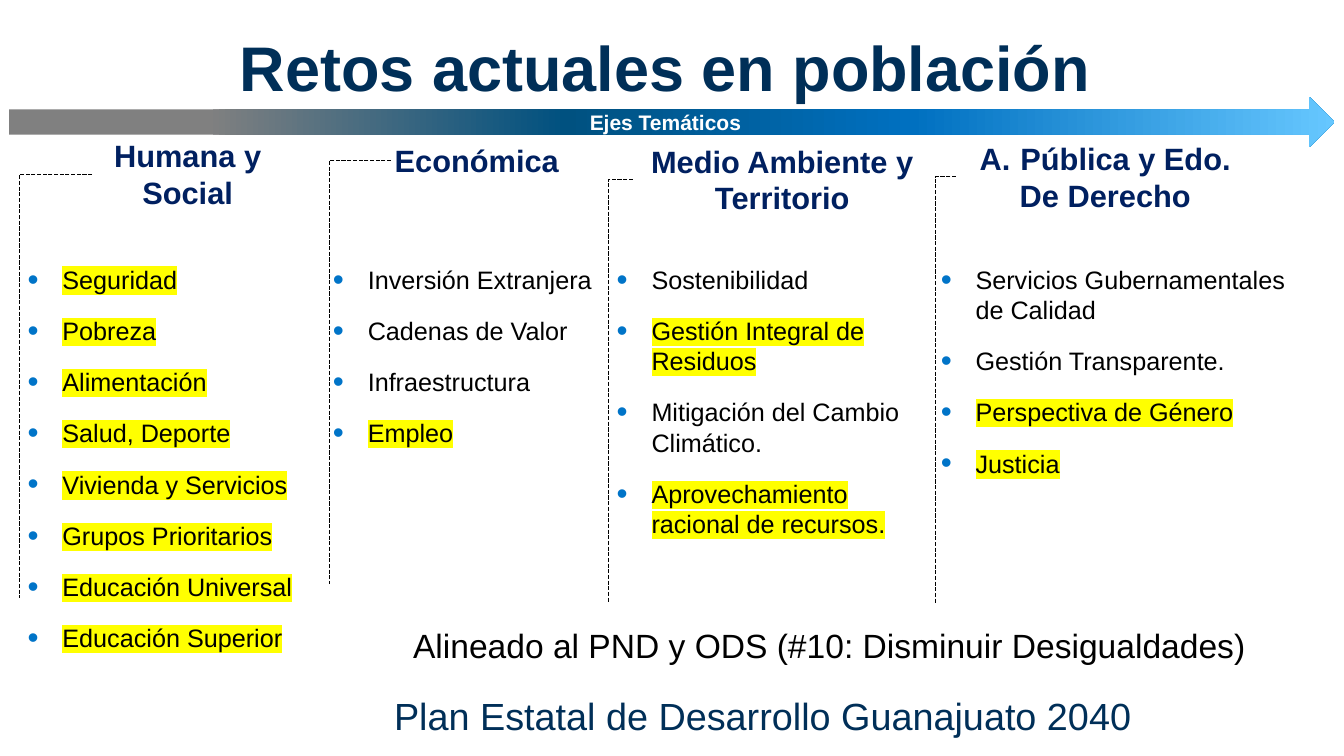
"""Build the slide on current population challenges by thematic axis."""
from dataclasses import dataclass

from lxml import etree
from pptx import Presentation
from pptx.dml.color import RGBColor
from pptx.enum.dml import MSO_LINE
from pptx.enum.shapes import MSO_CONNECTOR, MSO_SHAPE
from pptx.enum.text import MSO_ANCHOR, MSO_AUTO_SIZE, PP_ALIGN
from pptx.oxml.ns import qn
from pptx.slide import Slide
from pptx.text.text import TextFrame, _Paragraph
from pptx.util import Inches, Pt

LEFT, CENTER = PP_ALIGN.LEFT, PP_ALIGN.CENTER
TOP, MIDDLE = MSO_ANCHOR.TOP, MSO_ANCHOR.MIDDLE
NO_AUTOFIT = MSO_AUTO_SIZE.NONE
LONG_DASH = MSO_LINE.LONG_DASH
RIGHT_ARROW = MSO_SHAPE.RIGHT_ARROW
ELBOW = MSO_CONNECTOR.ELBOW
TITLE_ONLY = 5


@dataclass(frozen=True)
class Style:
    size: float
    color: str
    bold: bool = False


@dataclass(frozen=True)
class Theme:
    font: str = "Arial"
    title: Style = Style(90, "002F58", True)
    banner: Style = Style(30, "FFFFFF", True)
    heading: Style = Style(44, "002060", True)
    item: Style = Style(36, "000000")
    alignment: Style = Style(48, "000000")
    plan: Style = Style(54, "002F58")
    bullet: str = "0074C8"
    highlight: str = "FFFF00"
    rail: str = "000000"
    gradient: tuple[tuple[int, str], ...] = (
        (15, "808080"), (42, "005180"), (68, "0070C0"), (100, "66C7FF"))


@dataclass(frozen=True)
class Box:
    left: float
    top: float
    width: float
    height: float

    def lengths(self) -> tuple[Inches, ...]:
        return tuple(Inches(n) for n in (self.left, self.top, self.width, self.height))


@dataclass(frozen=True)
class Item:
    text: str
    marked: bool = False


@dataclass(frozen=True)
class Axis:
    heading: tuple[str, ...]
    heading_box: Box
    rail_left: float
    rail_bottom: float
    list_box: Box
    items: tuple[Item, ...]
    lettered: bool = False


THEME = Theme()
AXES = (
    Axis(("Humana y Social",), Box(1.83, 2.66, 3.79, 1.59), 0.39, 11.87,
         Box(0.45, 5.19, 5.71, 7.89),
         (Item("Seguridad", True), Item("Pobreza", True), Item("Alimentación", True),
          Item("Salud, Deporte", True), Item("Vivienda y Servicios", True),
          Item("Grupos Prioritarios", True), Item("Educación Universal", True),
          Item("Educación Superior", True))),
    Axis(("Económica",), Box(7.76, 2.76, 3.41, 0.85), 6.53, 11.59,
         Box(6.51, 5.19, 5.34, 5.22),
         (Item("Inversión Extranjera"), Item("Cadenas de Valor"),
          Item("Infraestructura"), Item("Empleo", True))),
    Axis(("Medio Ambiente y Territorio",), Box(12.56, 2.76, 5.93, 1.59), 12.08, 11.96,
         Box(12.14, 5.19, 6.06, 7.04),
         (Item("Sostenibilidad"), Item("Gestión Integral de Residuos", True),
          Item("Mitigación del Cambio Climático."),
          Item("Aprovechamiento racional de recursos.", True))),
    Axis(("Pública y Edo.", "De Derecho"), Box(18.97, 2.71, 5.93, 1.59), 18.56, 11.96,
         Box(18.57, 5.19, 7.54, 4.39),
         (Item("Servicios Gubernamentales de Calidad"), Item("Gestión Transparente."),
          Item("Perspectiva de Género", True), Item("Justicia", True)), lettered=True),
)


def set_frame(frame: TextFrame, anchor: MSO_ANCHOR, inset_x: float, inset_y: float) -> None:
    frame.word_wrap = True
    frame.auto_size = NO_AUTOFIT
    frame.vertical_anchor = anchor
    frame.margin_left = frame.margin_right = Inches(inset_x)
    frame.margin_top = frame.margin_bottom = Inches(inset_y)


def add_run(paragraph: _Paragraph, text: str, style: Style, marked: bool = False) -> None:
    run = paragraph.add_run()
    run.text = text
    run.font.size = Pt(style.size)
    run.font.bold = style.bold
    run.font.name = THEME.font
    run.font.color.rgb = RGBColor.from_string(style.color)
    if marked:
        highlight = etree.Element(qn("a:highlight"))
        etree.SubElement(highlight, qn("a:srgbClr"), val=THEME.highlight)
        run.font._element.find(qn("a:solidFill")).addnext(highlight)


def write(frame: TextFrame, lines: tuple[str, ...], style: Style, align: PP_ALIGN) -> None:
    for index, line in enumerate(lines):
        paragraph = frame.add_paragraph() if index else frame.paragraphs[0]
        paragraph.alignment = align
        add_run(paragraph, line, style)


def set_hanging(paragraph: _Paragraph, indent: float) -> etree._Element:
    properties = paragraph._p.get_or_add_pPr()
    properties.set("marL", str(Inches(indent)))
    properties.set("indent", str(Inches(-indent)))
    return properties


def add_text(slide: Slide, box: Box, lines: tuple[str, ...], style: Style,
             align: PP_ALIGN = CENTER, inset: float = 0.06) -> TextFrame:
    frame = slide.shapes.add_textbox(*box.lengths()).text_frame
    set_frame(frame, MIDDLE, inset, inset)
    write(frame, lines, style, align)
    return frame


def add_banner(slide: Slide, box: Box, text: str) -> None:
    arrow = slide.shapes.add_shape(RIGHT_ARROW, *box.lengths())
    arrow.shadow.inherit = False
    arrow.line.fill.background()
    arrow.fill.gradient()
    arrow.fill.gradient_angle = 0
    stops = arrow.element.spPr.find(qn("a:gradFill")).find(qn("a:gsLst"))
    for stop in list(stops):
        stops.remove(stop)
    for percent, color in THEME.gradient:
        stop = etree.SubElement(stops, qn("a:gs"), pos=str(percent * 1000))
        etree.SubElement(stop, qn("a:srgbClr"), val=color)
    set_frame(arrow.text_frame, MIDDLE, 0, 0)
    write(arrow.text_frame, (text,), THEME.banner, CENTER)


def add_rail(slide: Slide, axis: Axis) -> None:
    head = axis.heading_box
    rail = slide.shapes.add_connector(
        ELBOW, Inches(head.left), Inches(head.top + head.height / 2),
        Inches(axis.rail_left), Inches(axis.rail_bottom))
    rail.line.color.rgb = RGBColor.from_string(THEME.rail)
    rail.line.width = Pt(0.75)
    rail.line.dash_style = LONG_DASH
    properties = rail.element.spPr
    properties.find(qn("a:prstGeom")).set("prst", "bentConnector2")
    etree.SubElement(properties, qn("a:effectLst"))


def add_items(slide: Slide, axis: Axis) -> None:
    frame = slide.shapes.add_textbox(*axis.list_box.lengths()).text_frame
    set_frame(frame, TOP, 0.1, 0.05)
    for index, item in enumerate(axis.items):
        paragraph = frame.add_paragraph() if index else frame.paragraphs[0]
        paragraph.space_before = Pt(30 if index else 0)
        properties = set_hanging(paragraph, 0.69)
        color = etree.SubElement(properties, qn("a:buClr"))
        etree.SubElement(color, qn("a:srgbClr"), val=THEME.bullet)
        etree.SubElement(properties, qn("a:buSzPct"), val="125000")
        etree.SubElement(properties, qn("a:buFont"), typeface=THEME.font)
        etree.SubElement(properties, qn("a:buChar"), char="•")
        add_run(paragraph, item.text, THEME.item, item.marked)


def add_axis(slide: Slide, axis: Axis) -> None:
    heading = add_text(slide, axis.heading_box, axis.heading, THEME.heading)
    if axis.lettered:
        properties = set_hanging(heading.paragraphs[0], 0.81)
        etree.SubElement(properties, qn("a:buAutoNum"), type="alphaUcPeriod")
    add_rail(slide, axis)
    add_items(slide, axis)


def main() -> None:
    deck = Presentation()
    deck.slide_width, deck.slide_height = Inches(26.67), Inches(15)
    slide = deck.slides.add_slide(deck.slide_layouts[TITLE_ONLY])
    title = slide.shapes.title
    title.left, title.top, title.width, title.height = Box(1.57, 0.4, 23.26, 1.84).lengths()
    set_frame(title.text_frame, MIDDLE, 0.05, 0.05)
    write(title.text_frame, ("Retos actuales en población",), THEME.title, CENTER)
    add_banner(slide, Box(0.18, 1.92, 26.3, 1), "Ejes Temáticos")
    for axis in AXES:
        add_axis(slide, axis)
    add_text(slide, Box(7.77, 13.68, 18.54, 1.03),
             ("Plan Estatal de Desarrollo Guanajuato 2040",), THEME.plan, LEFT, 0.05)
    add_text(slide, Box(6.82, 12.34, 19.28, 0.92),
             ("Alineado al PND y ODS (#10: Disminuir Desigualdades)",), THEME.alignment)
    deck.save("out.pptx")


if __name__ == "__main__":
    main()
